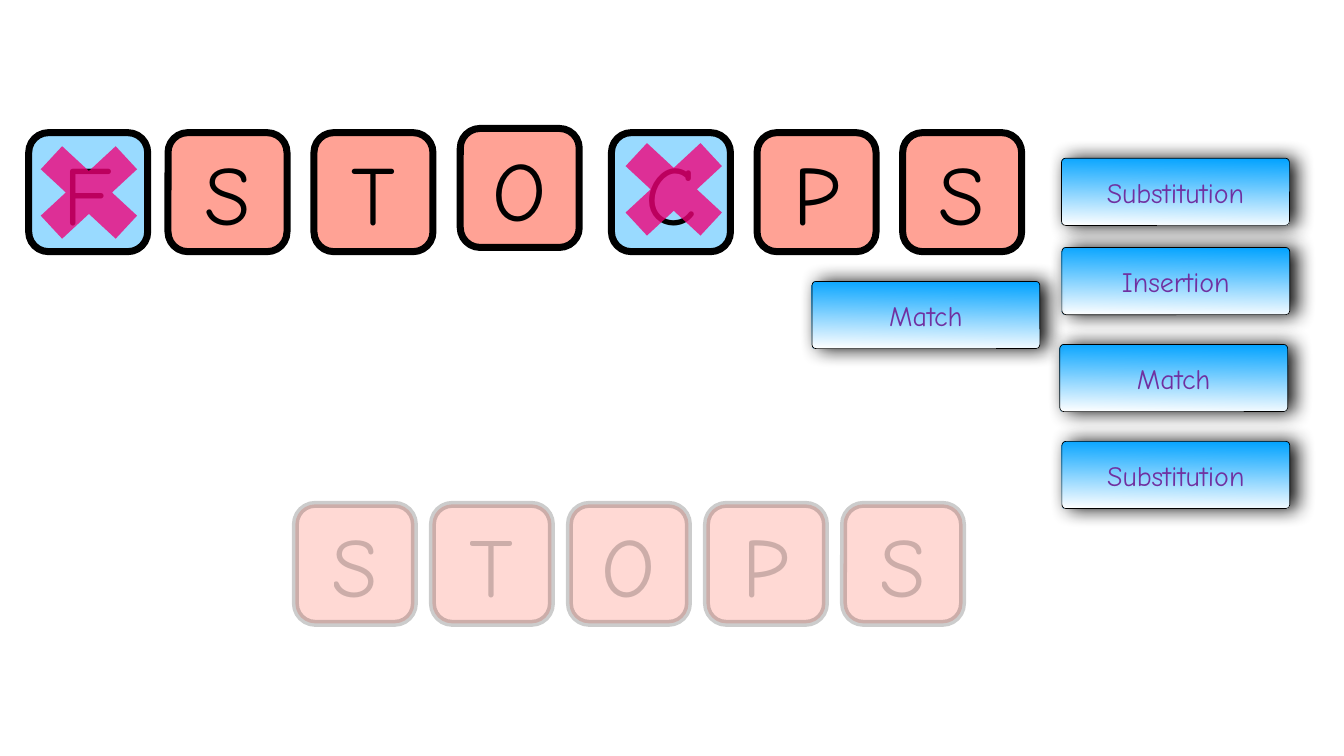
from lxml.etree import SubElement
from pptx import Presentation
from pptx.dml.color import RGBColor
from pptx.enum.shapes import MSO_SHAPE
from pptx.enum.text import MSO_ANCHOR, PP_ALIGN
from pptx.oxml.ns import qn
from pptx.util import Pt

COLORS = {
    "blue": "99DAFF",
    "salmon": "FFA295",
    "magenta": "F10079",
    "sky": "00A2FF",
    "white": "FFFFFF",
    "purple": "7030A0",
    "black": "000000",
}
RGB = {name: RGBColor.from_string(value) for name, value in COLORS.items()}

prs = Presentation()
prs.slide_width = Pt(1920)
prs.slide_height = Pt(1080)
slide = prs.slides.add_slide(prs.slide_layouts[6])


def add_box(text, left, top, width, height, size, color, border):
    box = slide.shapes.add_shape(
        MSO_SHAPE.ROUNDED_RECTANGLE, Pt(left), Pt(top), Pt(width), Pt(height)
    )
    box.shadow.inherit = False
    box.line.color.rgb = RGB["black"]
    box.line.width = Pt(border)
    frame = box.text_frame
    frame.text = text
    frame.vertical_anchor = MSO_ANCHOR.MIDDLE
    frame.margin_left = frame.margin_right = Pt(4)
    frame.margin_top = frame.margin_bottom = Pt(4)
    paragraph = frame.paragraphs[0]
    paragraph.alignment = PP_ALIGN.CENTER
    font = paragraph.runs[0].font
    font.name = "Comic Neue"
    font.size = Pt(size)
    font.color.rgb = RGB[color]
    return box


def set_opacity(shape, percents):
    for color, percent in zip(shape._element.iter(qn("a:srgbClr")), percents):
        SubElement(color, qn("a:alpha"), val=str(percent * 1000))


TILE = 170
typed_letters = [
    ("F", 41, 189.5, "blue"),
    ("S", 240, 189.5, "salmon"),
    ("T", 448.5, 189.5, "salmon"),
    ("O", 657.5, 183.5, "salmon"),
    ("C", 873.5, 189.5, "blue"),
    ("P", 1081.5, 189.5, "salmon"),
    ("S", 1289.5, 189.5, "salmon"),
]
for letter, left, top, fill in typed_letters:
    tile = add_box(letter, left, top, TILE, TILE, 120, "black", 10)
    tile.fill.solid()
    tile.fill.fore_color.rgb = RGB[fill]

for left, top in [(24, 179.5), (859.5, 175)]:
    cross = slide.shapes.add_shape(
        MSO_SHAPE.MATH_MULTIPLY, Pt(left), Pt(top), Pt(206), Pt(191)
    )
    cross.shadow.inherit = False
    cross.fill.solid()
    cross.fill.fore_color.rgb = RGB["magenta"]
    cross.line.fill.background()
    set_opacity(cross, [78])

operations = [
    ("Substitution", 1516.5, 226),
    ("Insertion", 1517, 353.5),
    ("Match", 1514, 492),
    ("Substitution", 1517, 630.5),
    ("Match", 1160, 402),
]
for operation, left, top in operations:
    button = add_box(operation, left, top, 325.5, 96, 40, "purple", 1)
    button.adjustments[0] = 0.06
    button.fill.gradient()
    button.fill.gradient_angle = 269
    for stop, color in zip(button.fill.gradient_stops, ["sky", "white"]):
        stop.color.rgb = RGB[color]
    effects = button._element.spPr.find(qn("a:effectLst"))
    glow = SubElement(
        effects, qn("a:outerShdw"),
        blurRad=str(Pt(28)), dist=str(Pt(9)), dir="0", rotWithShape="0",
    )
    shade = SubElement(glow, qn("a:srgbClr"), val=COLORS["black"])
    SubElement(shade, qn("a:alpha"), val="97000")

for index, letter in enumerate("STOPS"):
    target = add_box(letter, 422 + 195.75 * index, 720.5, TILE, TILE, 120, "black", 10)
    target.fill.solid()
    target.fill.fore_color.rgb = RGB["salmon"]
    set_opacity(target, [40, 20, 20])

prs.save("out.pptx")
